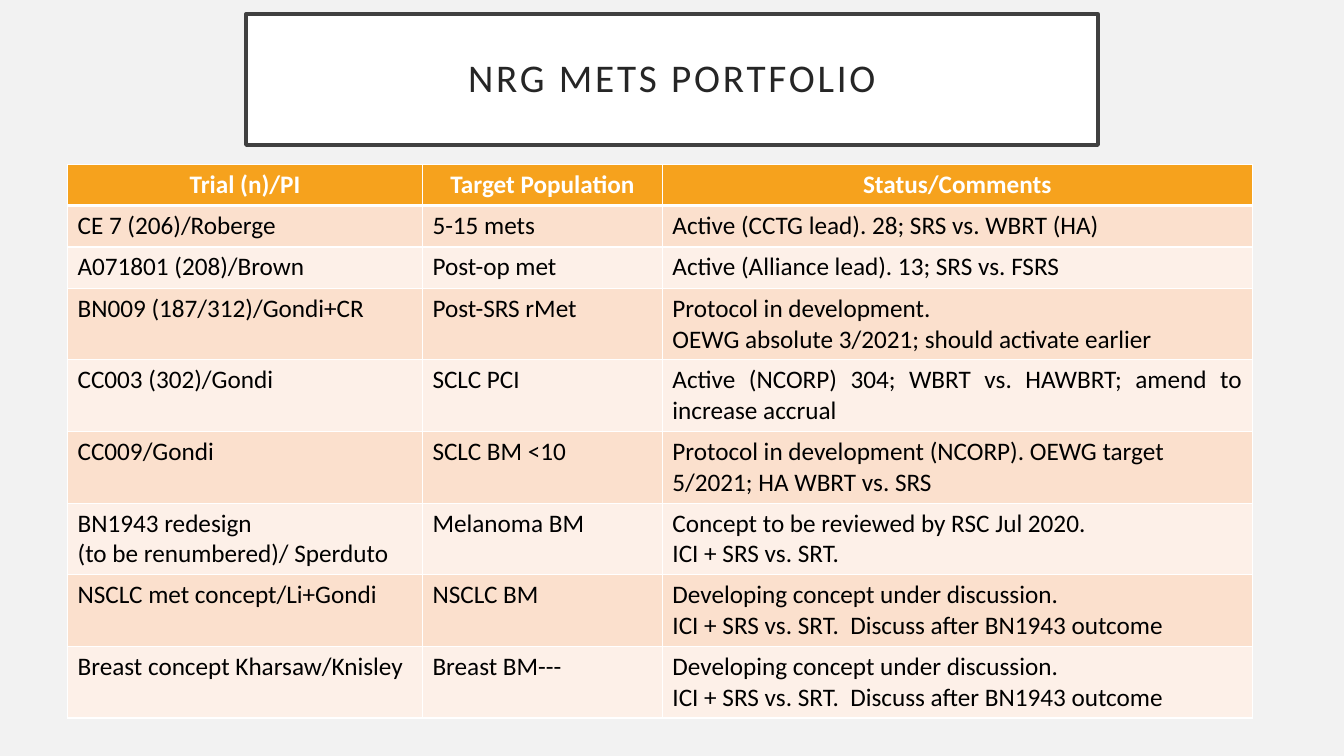
from lxml.etree import SubElement
from pptx import Presentation
from pptx.dml.color import RGBColor
from pptx.enum.shapes import MSO_SHAPE as Shape
from pptx.enum.text import MSO_ANCHOR as Anchor, PP_ALIGN as Align
from pptx.oxml.ns import qn
from pptx.util import Inches, Pt

TITLE = "NRG METS PORTFOLIO"
HEADINGS = ("Trial (n)/PI", "Target Population", "Status/Comments")
TRIALS = [
    ("CE 7 (206)/Roberge", "5-15 mets", "Active (CCTG lead). 28; SRS vs. WBRT (HA)"),
    ("A071801 (208)/Brown", "Post-op met", "Active (Alliance lead). 13; SRS vs. FSRS"),
    ("BN009 (187/312)/Gondi+CR", "Post-SRS rMet",
     "Protocol in development.\nOEWG absolute 3/2021; should activate earlier"),
    ("CC003 (302)/Gondi", "SCLC PCI",
     "Active (NCORP) 304; WBRT vs. HAWBRT; amend to increase accrual"),
    ("CC009/Gondi", "SCLC BM <10",
     "Protocol in development (NCORP). OEWG target 5/2021; HA WBRT vs. SRS"),
    ("BN1943 redesign\n(to be renumbered)/ Sperduto", "Melanoma BM",
     "Concept to be reviewed by RSC Jul 2020.\nICI + SRS vs. SRT."),
    ("NSCLC met concept/Li+Gondi", "NSCLC BM",
     "Developing concept under discussion.\nICI + SRS vs. SRT.  Discuss after BN1943 outcome"),
    ("Breast concept Kharsaw/Knisley", "Breast BM---",
     "Developing concept under discussion.\nICI + SRS vs. SRT.  Discuss after BN1943 outcome"),
]
LEFT_ALIGNED = {(5, 0), (5, 2), (6, 0)}
COLUMN_WIDTHS = (3.52, 2.38, 5.85)
ONE_LINE, TWO_LINES = 0.41, 0.71
ROW_HEIGHTS = [ONE_LINE] * 3 + [TWO_LINES] * 6

FONT = "Calibri"
BACKGROUND = RGBColor(0xF2, 0xF2, 0xF2)
WHITE = RGBColor(0xFF, 0xFF, 0xFF)
BLACK = RGBColor(0, 0, 0)
FRAME = RGBColor(0x40, 0x40, 0x40)
TITLE_INK = RGBColor(0x26, 0x26, 0x26)
ORANGE = RGBColor(0xF6, 0xA2, 0x1D)
BANDS = (RGBColor(0xFD, 0xF0, 0xE8), RGBColor(0xFB, 0xE0, 0xCD))


def style(paragraph, size, color, align, bold=False):
    paragraph.alignment = align
    font = paragraph.font
    font.name, font.size, font.bold = FONT, Pt(size), bold
    font.color.rgb = color


def add_borders(cell, top, bottom):
    properties = cell._tc.get_or_add_tcPr()
    for side, width in (("L", 1), ("R", 1), ("T", top), ("B", bottom)):
        line = SubElement(properties, qn(f"a:ln{side}"), w=str(Pt(width)))
        fill = SubElement(line, qn("a:solidFill"))
        SubElement(fill, qn("a:srgbClr"), val=str(WHITE))


def add_title(slide):
    box = slide.shapes.add_shape(
        Shape.RECTANGLE, Inches(2.44), Inches(0.14), Inches(8.45), Inches(1.3))
    box.shadow.inherit = False
    box.fill.solid()
    box.fill.fore_color.rgb = WHITE
    box.line.color.rgb = FRAME
    box.line.width = Pt(2.5)
    frame = box.text_frame
    frame.word_wrap = True
    frame.vertical_anchor = Anchor.MIDDLE
    frame.margin_left = frame.margin_right = Inches(0.2)
    frame.margin_top = frame.margin_bottom = Inches(0.2)
    frame.text = TITLE
    heading = frame.paragraphs[0]
    style(heading, 28, TITLE_INK, Align.CENTER)
    heading.line_spacing = 0.9
    heading.runs[0]._r.get_or_add_rPr().set("spc", "200")


def add_trials(slide):
    rows = [HEADINGS] + TRIALS
    table = slide.shapes.add_table(
        len(rows), len(HEADINGS), Inches(0.67), Inches(1.63),
        Inches(sum(COLUMN_WIDTHS)), Inches(sum(ROW_HEIGHTS))).table
    for column, width in zip(table.columns, COLUMN_WIDTHS):
        column.width = Inches(width)
    for r, texts in enumerate(rows):
        table.rows[r].height = Inches(ROW_HEIGHTS[r])
        header = r == 0
        for c, text in enumerate(texts):
            cell = table.cell(r, c)
            add_borders(cell, 3 if r == 1 else 1, 3 if header else 1)
            cell.fill.solid()
            cell.fill.fore_color.rgb = ORANGE if header else BANDS[r % 2]
            cell.text = text
            body_align = Align.LEFT if (r, c) in LEFT_ALIGNED else Align.JUSTIFY
            for paragraph in cell.text_frame.paragraphs:
                style(paragraph, 18, WHITE if header else BLACK,
                      Align.CENTER if header else body_align, header)


def main():
    deck = Presentation()
    deck.slide_width, deck.slide_height = Inches(13.33), Inches(7.5)
    slide = deck.slides.add_slide(deck.slide_layouts[6])
    slide.background.fill.solid()
    slide.background.fill.fore_color.rgb = BACKGROUND
    add_title(slide)
    add_trials(slide)
    deck.save("out.pptx")


if __name__ == "__main__":
    main()
